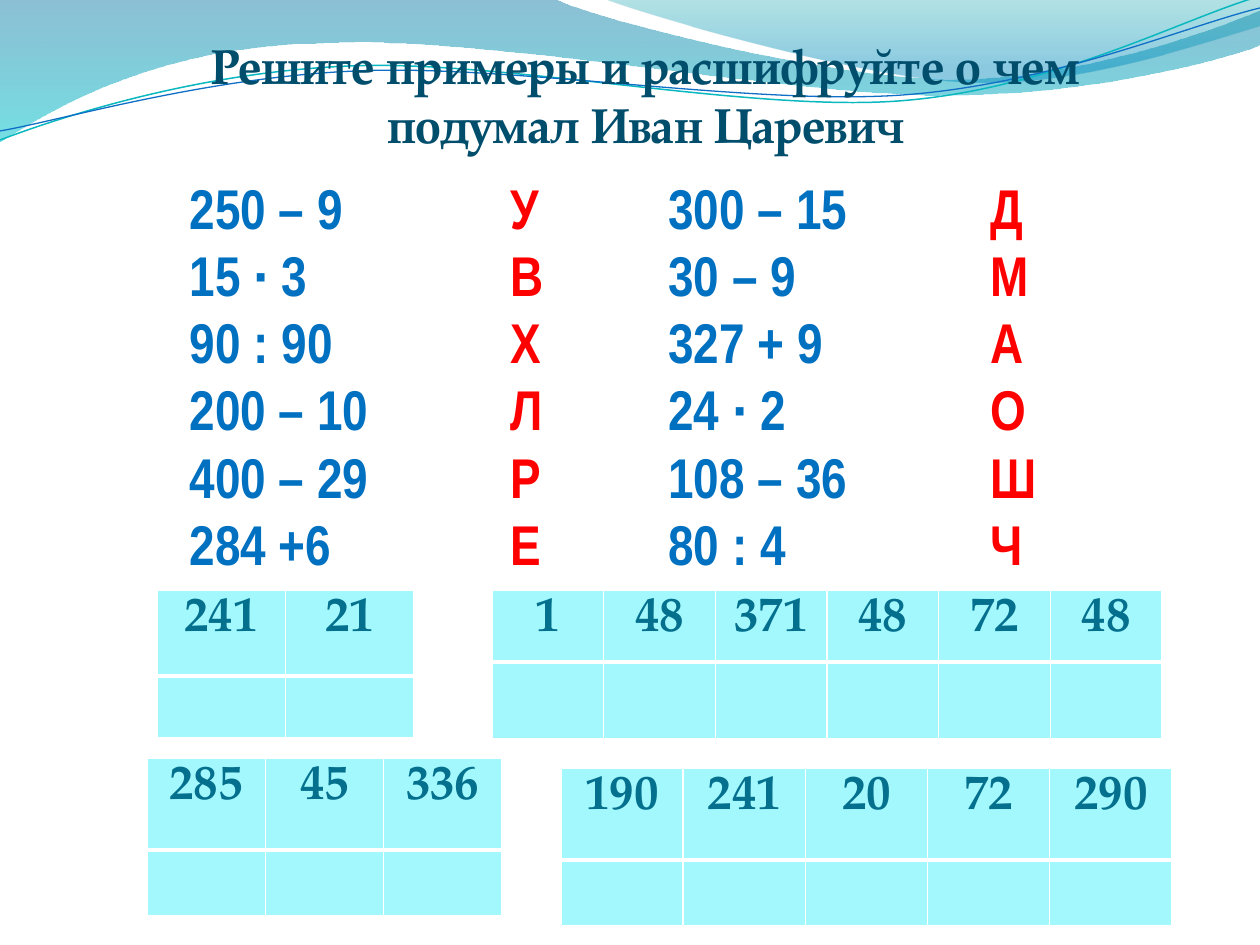
"""Builds a maths slide with sums to solve and number tables to decode."""
from lxml import etree
from pptx import Presentation
from pptx.dml.color import RGBColor
from pptx.enum.text import MSO_ANCHOR, MSO_AUTO_SIZE, PP_ALIGN
from pptx.oxml.ns import qn
from pptx.util import Emu, Pt

CENTER, LEFT = PP_ALIGN.CENTER, PP_ALIGN.LEFT
TOP, NO_FIT = MSO_ANCHOR.TOP, MSO_AUTO_SIZE.NONE
SCALE = 9144000 / 1260
SERIF, NARROW = "TeX Gyre Pagella", "Arial Narrow"
COLORS = {
    "title": "004E6C", "sum": "0070C0", "letter": "FF0000", "number": "05708E",
    "cell": "A2F8FC", "border": "FFFFFF", "teal line": "0AB8BF", "blue line": "0F6FC6",
    "deep blue": "0074A1", "cyan": "00C6CF", "green": "00A1A9", "sky": "008BBF",
}

TITLE = "Решите примеры и расшифруйте о чем подумал Иван Царевич"
TITLE_BOX = (129, 29, 1033, 217)
SUM_COLUMNS = [
    {"left": 177, "width": 240, "color": "sum",
     "lines": ("250 – 9", "15 ∙ 3", "90 : 90", "200 – 10", "400 – 29", "284 +6")},
    {"left": 498, "width": 80, "color": "letter", "lines": ("У", "В", "Х", "Л", "Р", "Е")},
    {"left": 656, "width": 240, "color": "sum",
     "lines": ("300 – 15", "30 – 9", "327 + 9", "24 ∙ 2", "108 – 36", "80 : 4")},
    {"left": 978, "width": 80, "color": "letter", "lines": ("Д", "М", "А", "О", "Ш", "Ч")},
]
SUMS_TOP, SUMS_HEIGHT = 167, 420
TABLES = [
    {"numbers": (241, 21), "at": (157, 590), "width": 257, "rows": (86, 62)},
    {"numbers": (1, 48, 371, 48, 72, 48), "at": (492, 590), "width": 670, "rows": (72, 77)},
    {"numbers": (285, 45, 336), "at": (147, 758), "width": 355, "rows": (92, 66)},
    {"numbers": (190, 241, 20, 72, 290), "at": (561, 768), "width": 611, "rows": (92, 66)},
]
WAVES = [
    {"start": (0, 0), "stops": [(0, "deep blue", 45), (1, "cyan", 55)], "segments": [
        (554, -1), (600, 21, 837, 79, 955, 79), (1075, 79, 1207, 33, 1260, 11), (1261, 45),
        (1239, 55, 1096, 96, 940, 95), (784, 95, 481, 35, 324, 43), (163, 45, 58, 105, -1, 142)]},
    {"start": (604, -1), "stops": [(0, "green", 30), (0.8, "sky", 45)], "segments": [
        (641, 14, 859, 78, 969, 82), (1079, 87, 1211, 40, 1260, 26), (1260, 0)]},
    {"start": (0, 140), "line": ("teal line", 0.85), "segments": [
        (60, 117, 199, 72, 349, 66), (498, 59, 747, 112, 898, 101), (1050, 90, 1182, 19, 1257, -3)]},
    {"start": (0, 131), "line": ("blue line", 0.75), "segments": [
        (59, 121, 207, 77, 357, 71), (508, 64, 752, 106, 903, 95), (1053, 84, 1186, 26, 1260, 8)]},
]


def px(value):
    return Emu(round(value * SCALE))


def rgb(name):
    return RGBColor.from_string(COLORS[name])


def add_text(para, text, *, size, font, color, align=CENTER):
    para.alignment = align
    span = para.add_run()
    span.text = text
    span.font.size = Pt(size)
    span.font.name = font
    span.font.bold = True
    span.font.color.rgb = rgb(color)


def place(box, bounds):
    box.left, box.top, box.width, box.height = map(px, bounds)
    box.text_frame.word_wrap = True
    box.text_frame.auto_size = NO_FIT
    box.text_frame.vertical_anchor = TOP
    tree = box.element.getparent()
    tree.append(box.element)


def bend(shape, segments):
    lines = list(shape.element.iter(qn("a:lnTo")))
    for line, segment in zip(lines, segments):
        if len(segment) == 2:
            continue
        curve = etree.Element(qn("a:cubicBezTo"))
        for x, y in zip(segment[::2], segment[1::2]):
            etree.SubElement(curve, qn("a:pt"), x=str(px(x) - shape.left), y=str(px(y) - shape.top))
        line.getparent().replace(line, curve)


def add_wave(page, wave):
    start, segments = wave["start"], wave["segments"]
    builder = page.shapes.build_freeform(px(start[0]), px(start[1]), scale=1.0)
    ends = [(px(segment[-2]), px(segment[-1])) for segment in segments]
    builder.add_line_segments(ends, close="stops" in wave)
    shape = builder.convert_to_shape()
    bend(shape, segments)
    shape.shadow.inherit = False
    if "line" in wave:
        color, width = wave["line"]
        shape.fill.background()
        shape.line.color.rgb = rgb(color)
        shape.line.width = Pt(width)
        return
    shape.line.fill.background()
    shape.fill.gradient()
    shape.fill.gradient_angle = 270
    for stop, (position, color, opacity) in zip(shape.fill.gradient_stops, wave["stops"]):
        stop.position = position
        stop.color.rgb = rgb(color)
    colors = shape.element.spPr.iter(qn("a:srgbClr"))
    for tag, (position, color, opacity) in zip(colors, wave["stops"]):
        etree.SubElement(tag, qn("a:alpha"), val=str(opacity * 1000))


def add_sum_column(box, column):
    place(box, (column["left"], SUMS_TOP, column["width"], SUMS_HEIGHT))
    frame = box.text_frame
    for index, text in enumerate(column["lines"]):
        para = frame.add_paragraph() if index else frame.paragraphs[0]
        para.space_before = Pt(0)
        para.line_spacing = Pt(38.4)
        props = para._p.get_or_add_pPr()
        props.set("marL", "0")
        props.set("indent", "0")
        etree.SubElement(props, qn("a:buNone"))
        add_text(para, text, size=32, font=NARROW, color=column["color"], align=LEFT)


def set_borders(cell, widths):
    props = cell._tc.get_or_add_tcPr()
    for index, (side, width) in enumerate(widths.items()):
        line = etree.Element(qn("a:" + side), w=str(Pt(width)))
        fill = etree.SubElement(line, qn("a:solidFill"))
        etree.SubElement(fill, qn("a:srgbClr"), val=COLORS["border"])
        props.insert(index, line)


def add_number_table(page, data):
    numbers, heights = data["numbers"], data["rows"]
    left, top = data["at"]
    table = page.shapes.add_table(len(heights), len(numbers), px(left), px(top),
                                  px(data["width"]), px(sum(heights))).table
    for row, height in zip(table.rows, heights):
        row.height = px(height)
    for column, number in enumerate(numbers):
        table.columns[column].width = px(data["width"] / len(numbers))
        for row in range(len(heights)):
            cell = table.cell(row, column)
            cell.fill.solid()
            cell.fill.fore_color.rgb = rgb("cell")
            set_borders(cell, {"lnL": 1, "lnR": 1, "lnT": 3 if row else 1, "lnB": 1 if row else 3})
        add_text(table.cell(0, column).text_frame.paragraphs[0], str(number),
                 size=28, font=SERIF, color="number")


def main():
    deck = Presentation()
    deck.slide_width, deck.slide_height = px(1260), px(945)
    page = deck.slides.add_slide(deck.slide_layouts[1])
    for wave in WAVES:
        add_wave(page, wave)
    title, body = page.shapes.title, page.placeholders[1]
    for index, column in enumerate(SUM_COLUMNS):
        box = page.shapes.add_textbox(0, 0, 0, 0) if index else body
        add_sum_column(box, column)
    place(title, TITLE_BOX)
    add_text(title.text_frame.paragraphs[0], TITLE, size=28, font=SERIF, color="title")
    for data in TABLES:
        add_number_table(page, data)
    deck.save("out.pptx")


if __name__ == "__main__":
    main()
